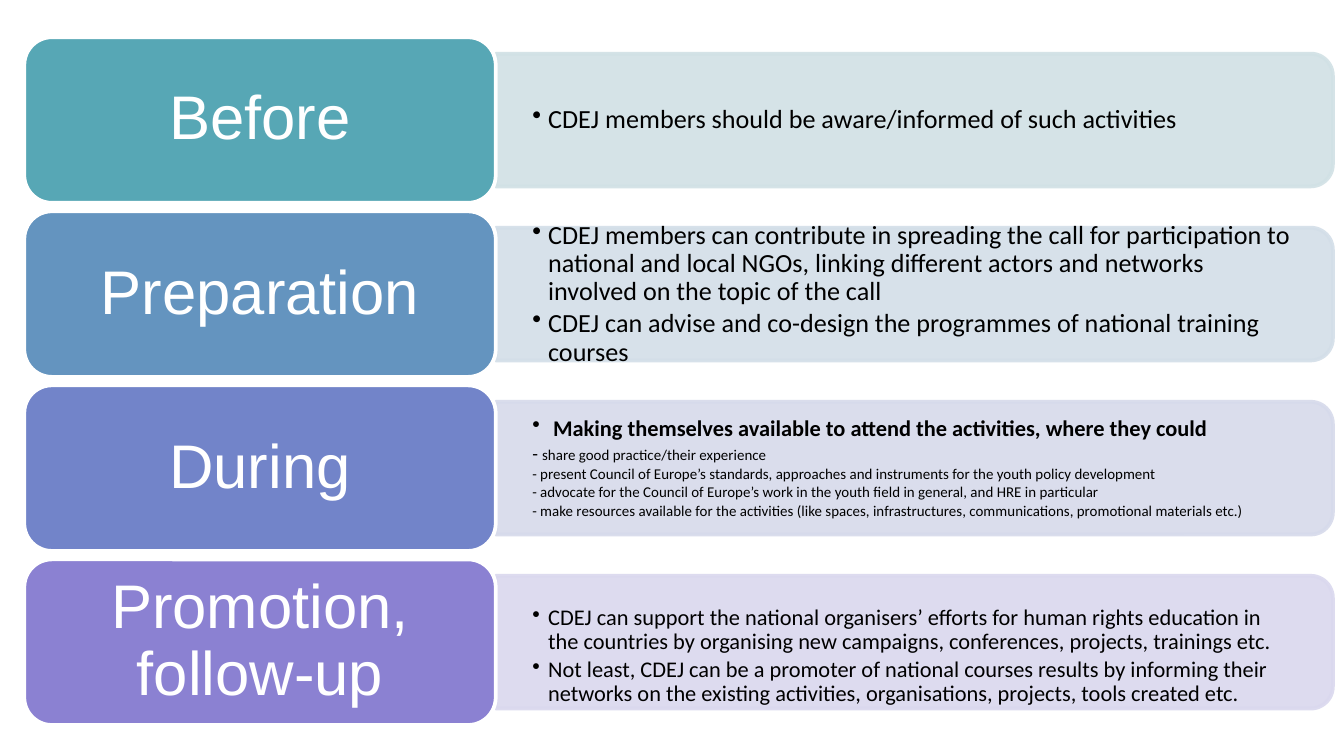
from dataclasses import dataclass

from lxml import etree
from pptx import Presentation
from pptx import util as u
from pptx.dml.color import RGBColor
from pptx.enum import shapes, text
from pptx.oxml.ns import qn

INK = {
    "white": "FFFFFF", "black": "000000",
    "teal": "57A7B5", "mist": "D1E1E5",
    "blue": "6494BF", "sky": "D3DEE8",
    "indigo": "7284C9", "haze": "D6DAEB",
    "violet": "8B81D2", "lilac": "DAD8EE",
}

# Centimetres
FIRST, STEP = 2.27, 3.29
PILL_X, PILL_W, PILL_H = 0.46, 8.91, 3.13
BAR_X, BAR_W, BAR_H = 9.37, 15.82, 2.51
NOTE_W, NOTE_H = 15.72, 2.26


@dataclass
class Line:
    words: str
    size: float
    bold: bool = False
    bullet: bool = True
    lead: str = ""


@dataclass
class Stage:
    title: str
    pill: str
    bar: str
    lines: list[Line]
    drop: float = 0


STAGES = [
    Stage("Before", "teal", "mist", [
        Line("CDEJ members should be aware/informed of such activities", 14),
    ]),
    Stage("Preparation", "blue", "sky", [
        Line("CDEJ members can contribute in spreading the call for participation "
             "to national and local NGOs, linking different actors and networks "
             "involved on the topic of the call", 14),
        Line("CDEJ can advise and co-design the programmes of national training "
             "courses", 14),
    ]),
    Stage("During", "indigo", "haze", [
        Line(" Making themselves available to attend the activities, "
             "where they could", 12, bold=True),
        Line("share good practice/their experience", 8, bullet=False, lead="- "),
        Line("- present Council of Europe’s standards, approaches and instruments "
             "for the youth policy development", 8, bullet=False),
        Line("- advocate for the Council of Europe’s work in the youth field in "
             "general, and HRE in particular", 8, bullet=False),
        Line("- make resources available for the activities (like spaces, "
             "infrastructures, communications, promotional materials etc.)",
             8, bullet=False),
    ]),
    Stage("Promotion, follow-up", "violet", "lilac", [
        Line("CDEJ can support the national organisers’ efforts for human rights "
             "education in the countries by organising new campaigns, "
             "conferences, projects, trainings etc.", 12),
        Line("Not least, CDEJ can be a promoter of national courses results by "
             "informing their networks on the existing activities, "
             "organisations, projects, tools created etc.", 12),
    ], drop=0.53),
]


def rgb(name: str) -> RGBColor:
    return RGBColor.from_string(INK[name])


def paint(shape, fill: str, edge: str) -> None:
    shape.shadow.inherit = False
    shape.fill.solid()
    shape.fill.fore_color.rgb = rgb(fill)
    shape.line.color.rgb = rgb(edge)
    shape.line.width = u.Pt(2)


def set_frame(frame, side: float, top: float, base: float) -> None:
    frame.word_wrap = True
    frame.vertical_anchor = text.MSO_ANCHOR.MIDDLE
    frame.margin_left = frame.margin_right = u.Cm(side)
    frame.margin_top, frame.margin_bottom = u.Cm(top), u.Cm(base)


def set_font(para, face: str, size: float, ink: str, bold: bool = False) -> None:
    para.font.name, para.font.size = face, u.Pt(size)
    para.font.bold = bold
    para.font.color.rgb = rgb(ink)


def draw_bar(slide, mid: float, ink: str) -> None:
    """Draw a bar, turned so that its round corners face right."""
    bar = slide.shapes.add_shape(
        shapes.MSO_SHAPE.ROUND_2_SAME_RECTANGLE,
        u.Cm(BAR_X + (BAR_W - BAR_H) / 2), u.Cm(mid - BAR_W / 2),
        u.Cm(BAR_H), u.Cm(BAR_W))
    bar.rotation = 90
    paint(bar, ink, ink)
    for tint in bar._element.spPr.iter(qn("a:srgbClr")):
        etree.SubElement(tint, qn("a:alpha"), val="90000")


def add_line(para, line: Line) -> None:
    para.level = 1
    para.line_spacing = 0.9
    para.space_after = u.Pt(0.15 * line.size)
    hang = u.Cm(0.3 if line.bullet else 0.15)
    props = para._p.get_or_add_pPr()
    props.set("marL", str(hang))
    props.set("indent", str(-hang))
    if line.bullet:
        tint = etree.SubElement(props, qn("a:buClr"))
        etree.SubElement(tint, qn("a:srgbClr"), val=INK["black"])
        etree.SubElement(props, qn("a:buChar"), char="•")
    set_font(para, "Calibri", line.size, "black", line.bold)
    if line.lead:
        run = para.add_run()
        run.text = line.lead
        run.font.size = u.Pt(10)
    para.add_run().text = line.words


def draw_notes(slide, mid: float, stage: Stage) -> None:
    box = slide.shapes.add_textbox(
        u.Cm(BAR_X), u.Cm(mid - NOTE_H / 2), u.Cm(NOTE_W), u.Cm(NOTE_H))
    frame = box.text_frame
    set_frame(frame, 0.69, 0.36 + stage.drop, 0.36)
    for i, line in enumerate(stage.lines):
        add_line(frame.add_paragraph() if i else frame.paragraphs[0], line)


def draw_pill(slide, mid: float, stage: Stage) -> None:
    pill = slide.shapes.add_shape(
        shapes.MSO_SHAPE.ROUNDED_RECTANGLE,
        u.Cm(PILL_X), u.Cm(mid - PILL_H / 2), u.Cm(PILL_W), u.Cm(PILL_H))
    paint(pill, stage.pill, "white")
    set_frame(pill.text_frame, 0.36, 0.18, 0.18)
    para = pill.text_frame.paragraphs[0]
    para.alignment = text.PP_ALIGN.CENTER
    para.line_spacing = 0.9
    set_font(para, "Arial", 33, "white")
    para.add_run().text = stage.title


def main() -> None:
    deck = Presentation()
    deck.slide_width, deck.slide_height = u.Cm(25.4), u.Cm(14.29)
    slide = deck.slides.add_slide(deck.slide_layouts[6])
    for i, stage in enumerate(STAGES):
        mid = FIRST + i * STEP
        draw_bar(slide, mid, stage.bar)
        draw_notes(slide, mid, stage)
        draw_pill(slide, mid, stage)
    deck.save("out.pptx")


if __name__ == "__main__":
    main()
